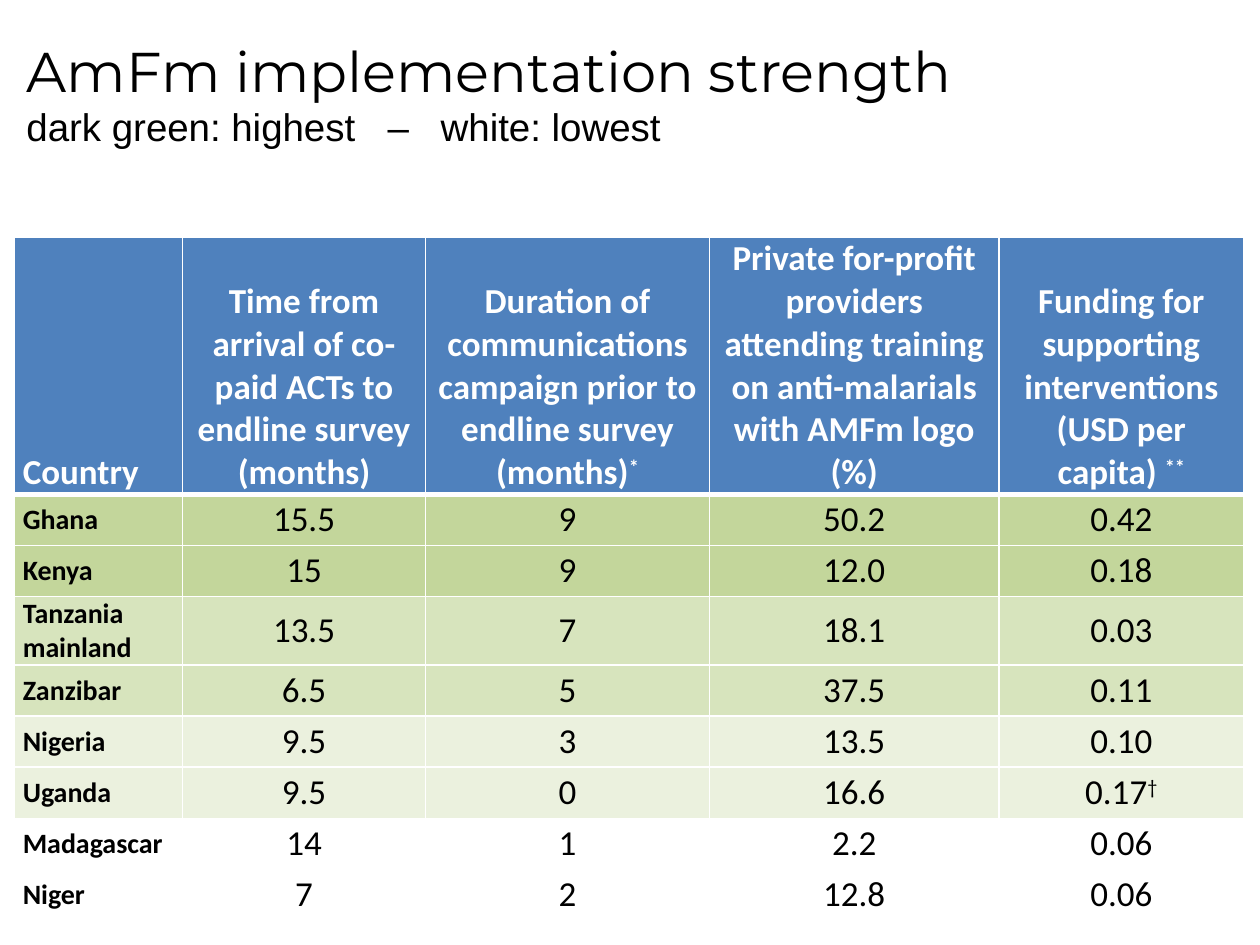
from lxml import etree
from pptx import Presentation
from pptx import util as u
from pptx.dml.color import RGBColor
from pptx.enum import text as t
from pptx.oxml import ns

# Content: "^" starts a superscript
TITLE = "AmFm implementation strength"
KEY = "dark green: highest\t–\twhite: lowest"
HEAD = [
    "Country",
    "Time from arrival of co-paid ACTs to endline survey (months)",
    "Duration of communications campaign prior to endline survey (months)^*",
    "Private for-profit providers attending training on anti-malarials "
    "with AMFm logo (%)",
    "Funding for supporting interventions (USD per capita) ^**",
]
ROWS = [
    ("Ghana", "15.5", "9", "50.2", "0.42"),
    ("Kenya", "15", "9", "12.0", "0.18"),
    ("Tanzania mainland", "13.5", "7", "18.1", "0.03"),
    ("Zanzibar", "6.5", "5", "37.5", "0.11"),
    ("Nigeria", "9.5", "3", "13.5", "0.10"),
    ("Uganda", "9.5", "0", "16.6", "0.17^†"),
    ("Madagascar", "14", "1", "2.2", "0.06"),
    ("Niger", "7", "2", "12.8", "0.06"),
]
BLUE, WHITE, BLACK = "4F81BD", "FFFFFF", "000000"
BANDS = ["C3D69B", "D7E4BD", "EBF1DE", WHITE]  # two rows to each shade

# Sizes in cm
WIDTHS = [3.4, 4.9, 5.72, 5.84, 4.93]
HIGH = {0: 5.16, 3: 1.37}
ROW = 1.03
FRAME = dict(margin_left=u.Cm(0.18), margin_right=u.Cm(0.18),
             margin_top=0, margin_bottom=0)


def color(code):
    return RGBColor.from_string(code)


def put(obj, vals):
    for name, val in vals.items():
        setattr(obj, name, val)


def write(par, words, size, face, code=BLACK, bold=False):
    run = par.add_run()
    run.text = words
    put(run.font, dict(size=u.Pt(size), name=face, bold=bold))
    run.font.color.rgb = color(code)
    return run


def edge(cell, widths):
    """Draw white borders, placed ahead of the fill."""
    props = cell._tc.get_or_add_tcPr()
    for i, (side, width) in enumerate(zip("LRTB", widths)):
        line = etree.Element(ns.qn("a:ln" + side), w=str(u.Pt(width)))
        fill = etree.SubElement(line, ns.qn("a:solidFill"))
        etree.SubElement(fill, ns.qn("a:srgbClr"), val=WHITE)
        props.insert(i, line)


def fill_cell(cell, words, row, col):
    top = row == 0
    put(cell, FRAME)
    cell.vertical_anchor = (t.MSO_ANCHOR.BOTTOM if top
                            else t.MSO_ANCHOR.MIDDLE)
    cell.fill.solid()
    cell.fill.fore_color.rgb = color(BLUE if top else BANDS[(row - 1) // 2])
    edge(cell, (1, 1, 3 if row == 1 else 1, 3 if top else 1))

    par = cell.text_frame.paragraphs[0]
    put(par, dict(space_after=u.Pt(3),
                  alignment=t.PP_ALIGN.CENTER if col else t.PP_ALIGN.LEFT))
    style = dict(size=20 if top or col else 16, face="Calibri",
                 code=WHITE if top else BLACK, bold=top or col == 0)
    base, _, mark = words.partition("^")
    write(par, base, **style)
    if mark:
        run = write(par, mark, **style)
        run.font._element.set("baseline", "30000")


def add_title(slide):
    box = slide.shapes.title
    put(box, dict(left=u.Cm(0.28), top=u.Cm(0.28),
                  width=u.Cm(24.18), height=u.Cm(3.18)))
    put(box.text_frame, dict(vertical_anchor=t.MSO_ANCHOR.MIDDLE,
                             word_wrap=True, auto_size=t.MSO_AUTO_SIZE.NONE))
    par = box.text_frame.paragraphs[0]
    par.alignment = t.PP_ALIGN.LEFT
    # Tab stops set the gaps around the dash
    tabs = etree.SubElement(par._p.get_or_add_pPr(), ns.qn("a:tabLst"))
    for stop in (7.28, 8.35):
        etree.SubElement(tabs, ns.qn("a:tab"), pos=str(u.Cm(stop)), algn="l")
    write(par, TITLE, 32, "Montserrat")
    par.add_line_break()
    write(par, KEY, 22, "Arial")


def add_grid(slide):
    data = [HEAD, *ROWS]
    highs = [HIGH.get(i, ROW) for i in range(len(data))]
    grid = slide.shapes.add_table(
        len(data), len(HEAD), u.Cm(0.28), u.Cm(4.78),
        u.Cm(sum(WIDTHS)), u.Cm(sum(highs))).table
    for col, width in zip(grid.columns, WIDTHS):
        col.width = u.Cm(width)
    for r, (high, line) in enumerate(zip(highs, data)):
        grid.rows[r].height = u.Cm(high)
        for c, words in enumerate(line):
            fill_cell(grid.cell(r, c), words, r, c)


def main():
    deck = Presentation()
    put(deck, dict(slide_width=u.Cm(25.4), slide_height=u.Cm(19.05)))
    slide = deck.slides.add_slide(deck.slide_layouts[5])
    add_title(slide)
    add_grid(slide)
    deck.save("out.pptx")


if __name__ == "__main__":
    main()
